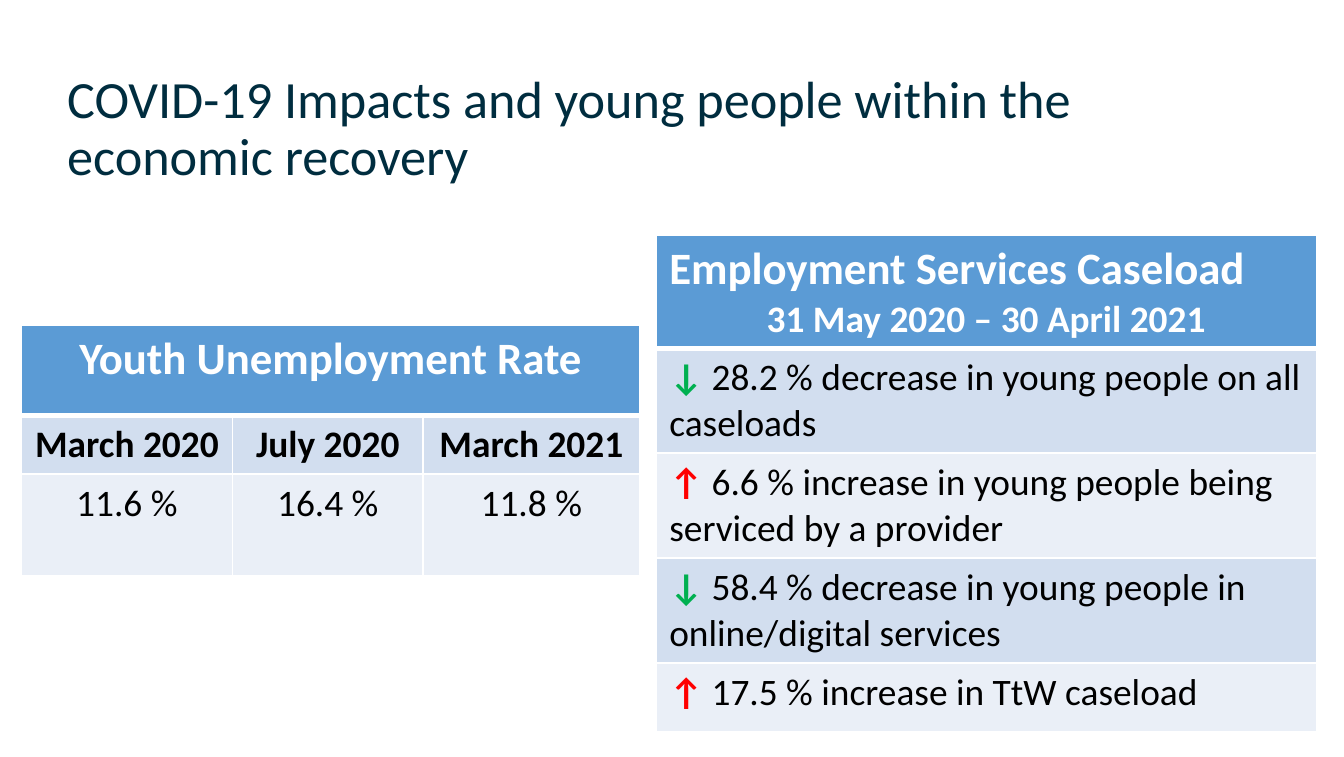
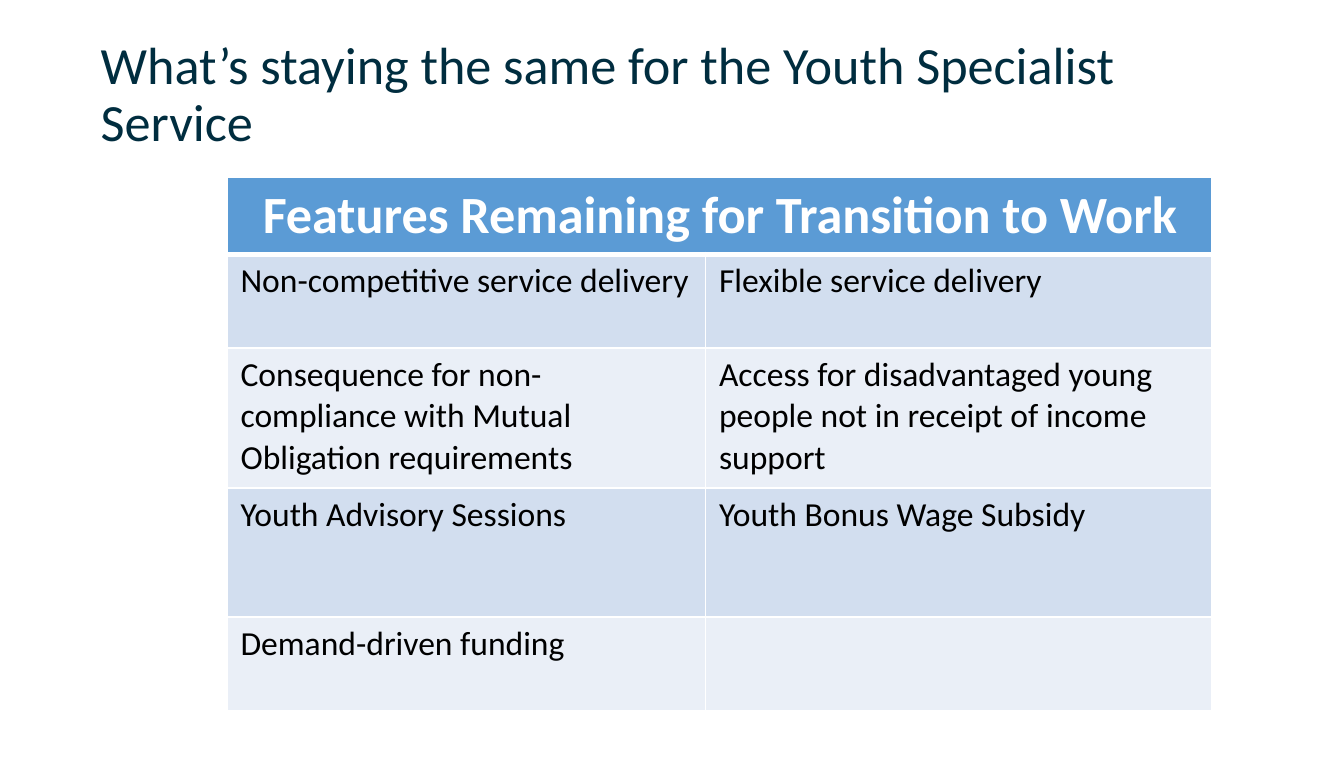
from lxml import etree
from pptx import Presentation
from pptx.dml.color import RGBColor
from pptx.enum.text import MSO_ANCHOR, PP_ALIGN
from pptx.oxml.ns import qn
from pptx.util import Pt

PX = 9144  # 100 px to the inch
FONT = "Calibri"
NAVY = RGBColor(0x00, 0x2D, 0x3F)
BLUE = RGBColor(0x5B, 0x9B, 0xD5)
BANDS = (RGBColor(0xD2, 0xDE, 0xEF), RGBColor(0xEA, 0xEF, 0xF7))
WHITE = RGBColor(0xFF, 0xFF, 0xFF)
BLACK = RGBColor(0x00, 0x00, 0x00)
GREEN = RGBColor(0x00, 0xB0, 0x50)
RED = RGBColor(0xFF, 0x00, 0x00)
CENTER, LEFT = PP_ALIGN.CENTER, PP_ALIGN.LEFT


def add_run(p, text, size, color=BLACK, bold=False):
    r = p.add_run()
    r.text = text
    for name, value in {"name": FONT, "size": Pt(size), "bold": bold}.items():
        setattr(r.font, name, value)
    r.font.color.rgb = color


def add_title(slide, box, text):
    tf = slide.shapes.add_textbox(*(v * PX for v in box)).text_frame
    settings = {"word_wrap": True, "vertical_anchor": MSO_ANCHOR.MIDDLE,
                "margin_left": 0, "margin_top": 0,
                "margin_right": 0, "margin_bottom": 0}
    for name, value in settings.items():
        setattr(tf, name, value)
    p = tf.paragraphs[0]
    p.line_spacing = 0.9
    add_run(p, text, 28, NAVY)


def set_borders(cell, top, bottom):
    """Give the cell white borders; top and bottom widths are in points."""
    tc_pr = cell._tc.get_or_add_tcPr()
    for tag, width in (("lnL", 1), ("lnR", 1), ("lnT", top), ("lnB", bottom)):
        ln = etree.SubElement(tc_pr, qn(f"a:{tag}"), w=str(Pt(width)))
        fill = etree.SubElement(ln, qn("a:solidFill"))
        etree.SubElement(fill, qn("a:srgbClr"), val=str(WHITE))


def add_banded_table(slide, left, top, widths, heights):
    """Add an empty table with a blue heading row across all columns."""
    table = slide.shapes.add_table(
        len(heights), len(widths), left * PX, top * PX,
        sum(widths) * PX, sum(heights) * PX).table
    for column, width in zip(table.columns, widths):
        column.width = width * PX
    for i, (row, height) in enumerate(zip(table.rows, heights)):
        row.height = height * PX
        for cell in row.cells:
            set_borders(cell, 3 if i == 1 else 1, 3 if i == 0 else 1)
            cell.fill.solid()
            cell.fill.fore_color.rgb = BANDS[(i - 1) % 2] if i else BLUE
    if len(widths) > 1:
        table.cell(0, 0).merge(table.cell(0, len(widths) - 1))
    return table


def write_heading(table, *lines):
    """Fill the heading row with (text, size, alignment) lines."""
    tf = table.cell(0, 0).text_frame
    for i, (text, size, align) in enumerate(lines):
        p = tf.add_paragraph() if i else tf.paragraphs[0]
        p.alignment = align
        add_run(p, text, size, WHITE, True)


def write_row(table, row, texts, size, align=LEFT, bold=False):
    for cell, text in zip(table.rows[row].cells, texts):
        p = cell.text_frame.paragraphs[0]
        p.alignment = align
        add_run(p, text, size, bold=bold)


def add_unemployment_table(slide, left, top):
    table = add_banded_table(slide, left, top, (157, 142, 161), (67, 43, 76))
    write_heading(table, ("Youth Unemployment Rate", 24, CENTER))
    write_row(table, 1, ("March 2020", "July 2020", "March 2021"), 20, CENTER, True)
    write_row(table, 2, ("11.6 %", "16.4 %", "11.8 %"), 20, CENTER)


def add_caseload_table(slide, left, top):
    changes = (
        ("↓", GREEN, "28.2 % decrease in young people on all caseloads"),
        ("↑", RED, "6.6 % increase in young people being serviced by a provider"),
        ("↓", GREEN, "58.4 % decrease in young people in online/digital services"),
        ("↑", RED, "17.5 % increase in TtW caseload"),
    )
    table = add_banded_table(slide, left, top, (492,), (84, 78, 78, 78, 51))
    write_heading(table, ("Employment Services Caseload", 24, LEFT),
                  ("31 May 2020 – 30 April 2021", 20, CENTER))
    for row, (arrow, color, text) in enumerate(changes, 1):
        p = table.cell(row, 0).text_frame.paragraphs[0]
        add_run(p, f"{arrow} ", 20, color, True)
        add_run(p, text, 20)


def add_features_table(slide, left, top):
    features = (
        ("Non-competitive service delivery", "Flexible service delivery"),
        ("Consequence for non-compliance with Mutual Obligation requirements",
         "Access for disadvantaged young people not in receipt of income support"),
        ("Youth Advisory Sessions", "Youth Bonus Wage Subsidy"),
        ("Demand-driven funding",),
    )
    table = add_banded_table(slide, left, top, (356, 377), (57, 70, 104, 96, 70))
    write_heading(table, ("Features Remaining for Transition to Work", 28, CENTER))
    for row, texts in enumerate(features, 1):
        write_row(table, row, texts, 18)


def build_impacts_slide(slide):
    add_title(slide, (50, 42, 781, 109),
              "COVID-19 Impacts and young people within the economic recovery")
    add_unemployment_table(slide, 16, 242)
    add_caseload_table(slide, 488, 175)


def build_features_slide(slide):
    add_title(slide, (75, 28, 804, 87),
              "What’s staying the same for the Youth Specialist Service")
    add_features_table(slide, 169, 132)


def main():
    prs = Presentation()
    prs.slide_width, prs.slide_height = 1000 * PX, 563 * PX
    for build in (build_impacts_slide, build_features_slide):
        build(prs.slides.add_slide(prs.slide_layouts[6]))
    prs.save("out.pptx")


if __name__ == "__main__":
    main()
